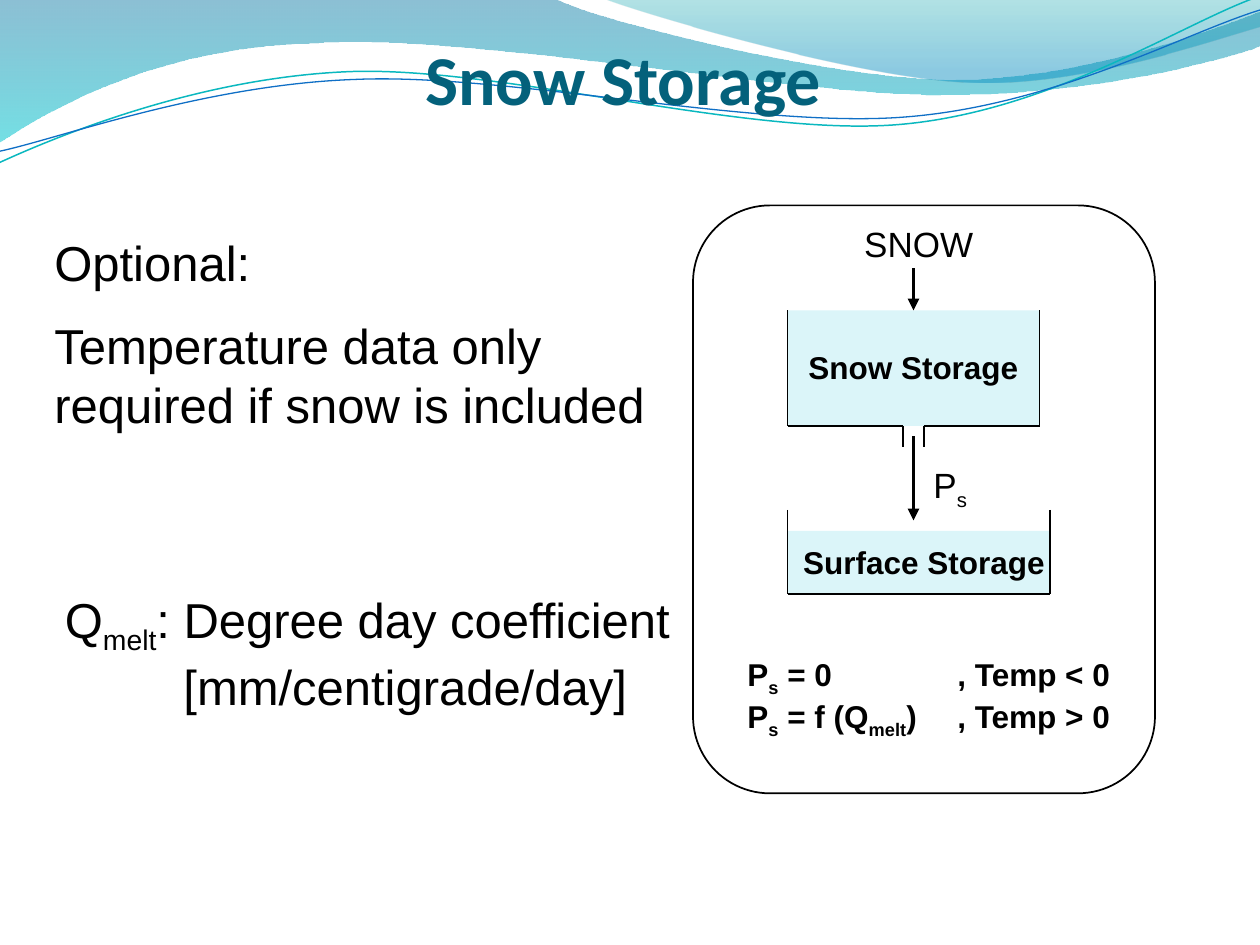
from dataclasses import dataclass
from math import cos, radians, sin

from lxml.etree import SubElement
from pptx import Presentation
from pptx.dml.color import RGBColor
from pptx.enum.shapes import MSO_CONNECTOR, MSO_SHAPE
from pptx.enum.text import MSO_ANCHOR, PP_ALIGN
from pptx.oxml.ns import qn
from pptx.util import Inches, Pt

BLACK = RGBColor(0x00, 0x00, 0x00)
WHITE = RGBColor(0xFF, 0xFF, 0xFF)
WATER = RGBColor(0xDB, 0xF5, 0xF9)
TITLE_TEAL = RGBColor(0x04, 0x61, 0x7B)
DEEP_BLUE = RGBColor(0x00, 0x74, 0xA1)
CYAN = RGBColor(0x00, 0xC6, 0xCF)
SEA_GREEN = RGBColor(0x00, 0xA1, 0xA9)
SKY_BLUE = RGBColor(0x00, 0x8B, 0xBF)
LINE_TEAL = RGBColor(0x0A, 0xB8, 0xBF)
LINE_BLUE = RGBColor(0x0F, 0x6F, 0xC6)

CELL = 1 / 12  # grid cell in inches
GRID_TOP = 1.63  # row 0
UNITS = 1000  # outline units per inch
TILT = -2.7  # degrees, both thin wave lines
Point = tuple[float, float]


@dataclass(frozen=True)
class Wave:
    """Runs of points: one point is a straight step, three a Bezier curve."""
    start: Point
    steps: list[tuple[Point, ...]]
    stops: tuple = ()  # (position, colour, opacity in percent)
    line: RGBColor | None = None
    weight: float = 0
    pivot: Point | None = None  # centre of a tilted wave


@dataclass(frozen=True)
class Label:
    """Paragraphs of (text, is_subscript) runs in a grid box."""
    col: float
    row: float
    cols: float
    rows: float
    paragraphs: list[list[tuple[str, bool]]]
    size: int
    bold: bool = False
    centred: bool = False
    tab: float = 0


@dataclass(frozen=True)
class Stroke:
    start: Point
    end: Point
    arrow: bool = False


WAVES = [
    Wave((0, 0), [((4.4, -0.01),),
                  ((4.76, 0.17), (6.64, 0.63), (7.58, 0.63)),
                  ((8.53, 0.63), (9.58, 0.26), (10, 0.09)),
                  ((10.01, 0.36),),
                  ((9.83, 0.44), (8.7, 0.76), (7.46, 0.75)),
                  ((6.22, 0.75), (3.82, 0.28), (2.57, 0.34)),
                  ((1.29, 0.36), (0.46, 0.83), (-0.01, 1.13))],
         stops=((0, DEEP_BLUE, 45), (1, CYAN, 55))),
    Wave((4.79, -0.01), [((5.09, 0.11), (6.82, 0.62), (7.69, 0.65)),
                         ((8.56, 0.69), (9.61, 0.32), (10, 0.21)),
                         ((10, 0),)],
         stops=((0, SEA_GREEN, 30), (0.8, SKY_BLUE, 45))),
    Wave((0, 1.29), [((0.48, 1.07), (1.58, 0.62), (2.76, 0.57)),
                     ((3.95, 0.52), (5.93, 1.09), (7.13, 0.99)),
                     ((8.33, 0.89), (9.38, 0.19), (9.97, -0.02))],
         line=LINE_TEAL, weight=0.85, pivot=(4.99, 0.67)),
    Wave((0, 1.2), [((0.47, 1.1), (1.63, 0.67), (2.83, 0.63)),
                    ((4.02, 0.58), (5.98, 1.02), (7.17, 0.93)),
                    ((8.37, 0.84), (9.41, 0.26), (10, 0.08))],
         line=LINE_BLUE, weight=0.75, pivot=(5, 0.69)),
]

LABELS = [
    Label(4, 2, 62, 21, [[("Optional:", False)],
                         [("Temperature data only required if snow is included", False)]], 28),
    Label(81, 1, 13, 5, [[("SNOW", False)]], 20, centred=True),
    Label(87, 24, 7, 5, [[("P", False), ("s", True)]], 20, centred=True),
    Label(70, 42.2, 40, 5, [[("P", False), ("s", True), (" = 0\t, Temp < 0", False)]],
          18, bold=True, tab=20),
    Label(70, 46.2, 42, 5, [[("P", False), ("s", True), (" = f (Q", False),
                             ("melt", True), (")\t, Temp > 0", False)]],
          18, bold=True, tab=20),
    Label(75, 13, 24, 5, [[("Snow Storage", False)]], 18, bold=True, centred=True),
    Label(74, 31.6, 28, 5, [[("Surface Storage", False)]], 18, bold=True, centred=True),
    Label(5, 36, 61, 12.5, [[("Q", False), ("melt", True),
                             (": Degree day coefficient\v\t[mm/centigrade/day]", False)]],
          28, tab=11.3),
]

SNOW_TANK = [
    Stroke((75, 10), (75, 21)), Stroke((75, 21), (86, 21)), Stroke((86, 21), (86, 23)),
    Stroke((88, 21), (88, 23)), Stroke((88, 21), (99, 21)), Stroke((99, 10), (99, 21)),
]
SURFACE_TANK = [
    Stroke((100, 29), (100, 37)), Stroke((100, 37), (75, 37)), Stroke((75, 29), (75, 37)),
]
SNOWFALL = Stroke((87, 6), (87, 10), arrow=True)
MELT = Stroke((87, 22), (87, 30), arrow=True)


def at(col: float, row: float) -> tuple[int, int]:
    return Inches(col * CELL), Inches(GRID_TOP + row * CELL)


def level(point: Point, pivot: Point) -> Point:
    """Undo the tilt of a point, as the shape itself is rotated."""
    angle = radians(-TILT)
    dx, dy = point[0] - pivot[0], point[1] - pivot[1]
    return (pivot[0] + dx * cos(angle) - dy * sin(angle),
            pivot[1] + dx * sin(angle) + dy * cos(angle))


def bend(outline, steps: list[tuple[Point, ...]]) -> None:
    """Join each three line segments of a curved step into one Bezier curve."""
    segments = iter(list(outline._element.iter(qn("a:lnTo"))))
    for step in steps:
        parts = [next(segments) for _ in step]
        if len(parts) == 3:
            first = parts[0]
            curve = first.makeelement(qn("a:cubicBezTo"))
            first.addprevious(curve)
            for part in parts:
                curve.append(part[0])
                part.getparent().remove(part)


def draw_wave(shapes, wave: Wave) -> None:
    points = [wave.start] + [point for step in wave.steps for point in step]
    if wave.pivot:
        points = [level(point, wave.pivot) for point in points]
    points = [(x * UNITS, y * UNITS) for x, y in points]
    builder = shapes.build_freeform(*points[0], scale=Inches(1) / UNITS)
    builder.add_line_segments(points[1:], close=bool(wave.stops))
    ribbon = builder.convert_to_shape()
    bend(ribbon, wave.steps)
    ribbon.shadow.inherit = False
    if wave.pivot:
        ribbon.rotation = TILT
    if not wave.stops:
        ribbon.fill.background()
        ribbon.line.color.rgb = wave.line
        ribbon.line.width = Pt(wave.weight)
        return
    ribbon.line.fill.background()
    ribbon.fill.gradient()
    ribbon.fill.gradient_angle = 270
    for stop, (position, colour, _) in zip(ribbon.fill.gradient_stops, wave.stops):
        stop.position = position
        stop.color.rgb = colour
    tints = ribbon._element.spPr.iter(qn("a:srgbClr"))
    for tint, (_, _, opacity) in zip(tints, wave.stops):
        SubElement(tint, qn("a:alpha"), val=str(opacity * 1000))


def draw_block(shapes, kind, col: float, row: float, cols: float, rows: float,
               colour: RGBColor, outlined: bool = False):
    block = shapes.add_shape(kind, *at(col, row), Inches(cols * CELL), Inches(rows * CELL))
    block.shadow.inherit = False
    block.fill.solid()
    block.fill.fore_color.rgb = colour
    if outlined:
        block.line.color.rgb = BLACK
        block.line.width = Pt(1)
    else:
        block.line.fill.background()
    return block


def draw_stroke(shapes, stroke: Stroke):
    line = shapes.add_connector(MSO_CONNECTOR.STRAIGHT, *at(*stroke.start), *at(*stroke.end))
    line.line.color.rgb = BLACK
    line.line.width = Pt(2.25 if stroke.arrow else 1)
    if stroke.arrow:
        SubElement(line.line._get_or_add_ln(), qn("a:tailEnd"), type="triangle")
    SubElement(line._element.spPr, qn("a:effectLst"))
    return line


def draw_label(shapes, label: Label) -> None:
    frame = shapes.add_textbox(*at(label.col, label.row), Inches(label.cols * CELL),
                               Inches(label.rows * CELL)).text_frame
    frame.word_wrap = True
    for index, runs in enumerate(label.paragraphs):
        paragraph = frame.add_paragraph() if index else frame.paragraphs[0]
        if label.tab:
            tabs = SubElement(paragraph._p.get_or_add_pPr(), qn("a:tabLst"))
            SubElement(tabs, qn("a:tab"), pos=str(Inches(label.tab * CELL)), algn="l")
        if index:
            paragraph.space_before = Pt(label.size / 2)
        paragraph.alignment = PP_ALIGN.CENTER if label.centred else PP_ALIGN.LEFT
        for text, subscript in runs:
            for part, piece in enumerate(text.split("\v")):
                if part:
                    paragraph.add_line_break()
                run = paragraph.add_run()
                run.text = piece
                style_font(run.font, "Arial", label.size, BLACK, label.bold)
                if subscript:
                    run.font._element.set("baseline", "-25000")


def style_font(font, name: str, size: int, colour: RGBColor, bold: bool) -> None:
    font.name, font.size, font.bold = name, Pt(size), bold
    font.color.rgb = colour


def draw_title(shapes) -> None:
    frame = shapes.add_textbox(Inches(0.47), Inches(0.28), Inches(8.95), Inches(0.98)).text_frame
    frame.margin_left = frame.margin_right = frame.margin_top = frame.margin_bottom = 0
    frame.word_wrap = True
    frame.vertical_anchor = MSO_ANCHOR.TOP
    frame.paragraphs[0].alignment = PP_ALIGN.CENTER
    run = frame.paragraphs[0].add_run()
    run.text = "Snow Storage"
    style_font(run.font, "Calibri", 40, TITLE_TEAL, True)


def main() -> None:
    deck = Presentation()
    deck.slide_width, deck.slide_height = Inches(10), Inches(7.5)
    shapes = deck.slides.add_slide(deck.slide_layouts[6]).shapes
    for wave in WAVES:
        draw_wave(shapes, wave)
    draw_block(shapes, MSO_SHAPE.ROUNDED_RECTANGLE, 66, 0, 44, 56, WHITE, outlined=True)
    draw_block(shapes, MSO_SHAPE.RECTANGLE, 75, 31, 25, 6, WATER)
    snow_pack = draw_block(shapes, MSO_SHAPE.RECTANGLE, 75, 10, 24, 11, WATER)
    draw_title(shapes)
    for stroke in SNOW_TANK + SURFACE_TANK + [MELT]:
        draw_stroke(shapes, stroke)
    draw_stroke(shapes, SNOWFALL).end_connect(snow_pack, 0)
    for label in LABELS:
        draw_label(shapes, label)
    deck.save("out.pptx")


if __name__ == "__main__":
    main()
